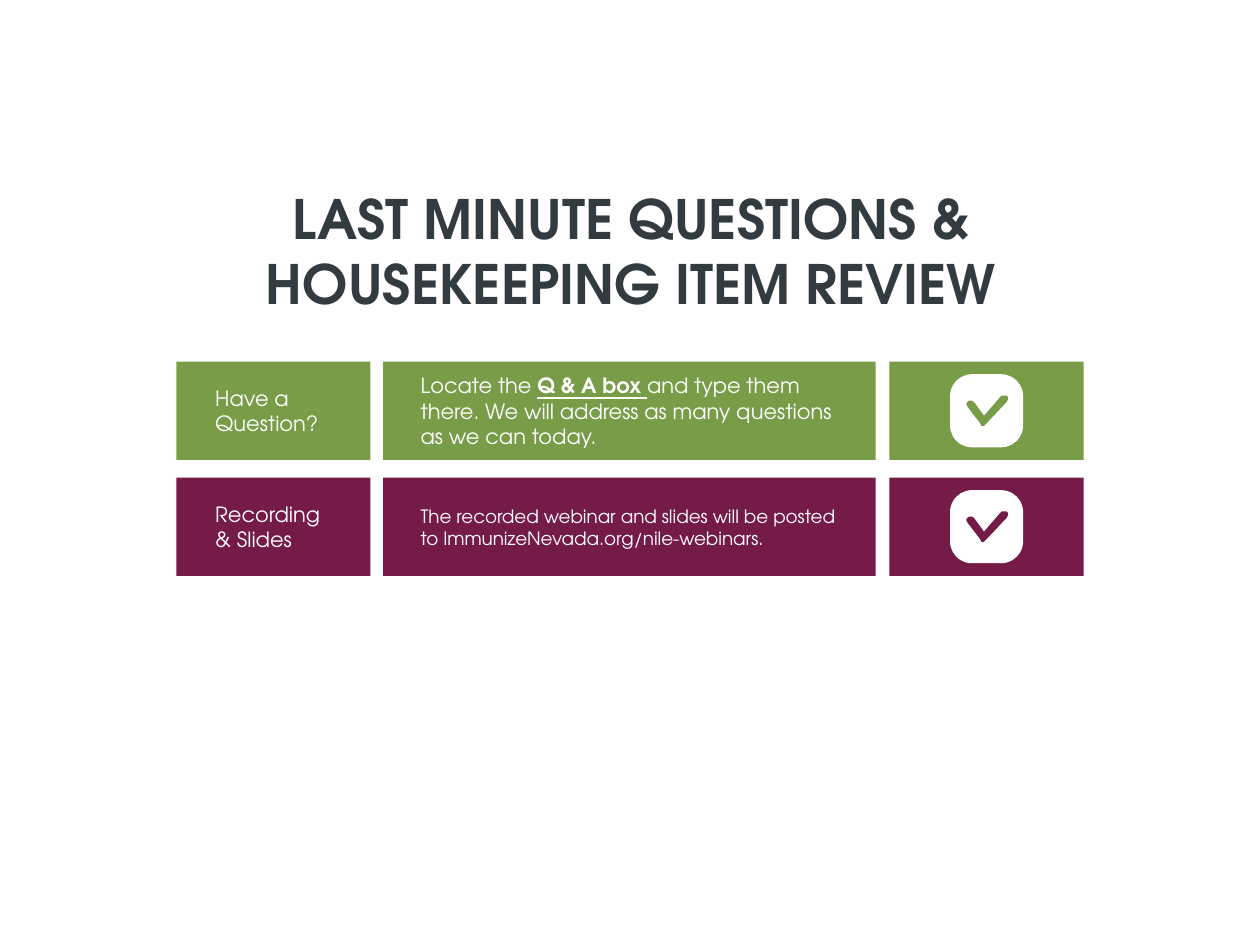
from dataclasses import dataclass

from pptx import Presentation
from pptx.dml.color import RGBColor
from pptx.enum.shapes import MSO_SHAPE as Shape
from pptx.enum.text import MSO_ANCHOR as Anchor, PP_ALIGN as Align
from pptx.shapes.base import BaseShape
from pptx.shapes.shapetree import GroupShapes, SlideShapes
from pptx.util import Inches, Pt

FONT = "TeX Gyre Adventor"
SLATE = RGBColor(0x32, 0x3C, 0x40)
GREEN = RGBColor(0x78, 0x9C, 0x48)
PLUM = RGBColor(0x74, 0x1B, 0x47)
WHITE = RGBColor(0xFF, 0xFF, 0xFF)

FIRST_ROW_TOP = 2.87
ROW_PITCH = 0.92
PANEL_HEIGHT = 0.78
PANEL_COLUMNS = ((1.4, 1.54), (3.04, 3.91), (7.06, 1.54))
BADGE_SIZE = 0.58
CHECK_OUTLINE = (
    (30, 0), (28.5, 0.2), (27, 1), (14, 15.7), (5.5, 5.3), (4.5, 4.3),
    (3, 4), (1.5, 4.5), (0.4, 5.7), (0, 7), (0.7, 9), (11, 22.5),
    (12, 23.5), (13.2, 24), (14.5, 23.7), (16, 22.5), (32, 4.6),
    (33, 3), (32.7, 1.2), (31.5, 0.2),
)


@dataclass(frozen=True)
class TextPart:
    text: str
    emphasized: bool = False


@dataclass(frozen=True)
class TextStyle:
    size: float
    color: RGBColor = WHITE
    bold: bool = False
    alignment: Align = Align.LEFT


@dataclass(frozen=True)
class ReviewItem:
    label: str
    details: tuple[TextPart, ...]
    detail_size: float
    color: RGBColor


ITEMS = (
    ReviewItem(
        "Have a Question?",
        (
            TextPart("Locate the "),
            TextPart("Q & A box ", emphasized=True),
            TextPart("and type them there. We will address as many questions as we can today."),
        ),
        12,
        GREEN,
    ),
    ReviewItem(
        "Recording & Slides",
        (TextPart("The recorded webinar and slides will be posted to ImmunizeNevada.org/nile-webinars."),),
        10.5,
        PLUM,
    ),
)


def paint(shape: BaseShape, color: RGBColor) -> None:
    shape.shadow.inherit = False
    shape.fill.solid()
    shape.fill.fore_color.rgb = color
    shape.line.fill.background()


def add_text(
    shapes: SlideShapes | GroupShapes,
    box: tuple[float, float, float, float],
    parts: tuple[TextPart, ...],
    style: TextStyle,
) -> None:
    text_frame = shapes.add_textbox(*map(Inches, box)).text_frame
    text_frame.word_wrap = True
    text_frame.vertical_anchor = Anchor.MIDDLE
    text_frame.margin_left = text_frame.margin_right = Inches(0.1)
    text_frame.margin_top = text_frame.margin_bottom = Inches(0.1)
    paragraph = text_frame.paragraphs[0]
    paragraph.alignment = style.alignment
    for part in parts:
        run = paragraph.add_run()
        run.text = part.text
        run.font.name = FONT
        run.font.size = Pt(style.size)
        run.font.color.rgb = style.color
        run.font.bold = style.bold or part.emphasized
        run.font.underline = part.emphasized


def add_check(shapes: SlideShapes, left: float, top: float, color: RGBColor) -> None:
    start, *others = CHECK_OUTLINE
    builder = shapes.build_freeform(*start, scale=Inches(0.01))
    builder.add_line_segments(others, close=True)
    paint(builder.convert_to_shape(Inches(left), Inches(top)), color)


def add_item(shapes: SlideShapes, item: ReviewItem, top: float) -> None:
    group = shapes.add_group_shape().shapes
    for left, width in PANEL_COLUMNS:
        panel = group.add_shape(
            Shape.RECTANGLE, Inches(left), Inches(top), Inches(width), Inches(PANEL_HEIGHT)
        )
        paint(panel, item.color)
    add_text(group, (1.61, top + 0.19, 1.12, 0.4), (TextPart(item.label),), TextStyle(12))
    add_text(group, (3.24, top + 0.1, 3.52, 0.58), item.details, TextStyle(item.detail_size))
    badge = group.add_shape(
        Shape.ROUNDED_RECTANGLE, Inches(7.54), Inches(top + 0.1), Inches(BADGE_SIZE), Inches(BADGE_SIZE)
    )
    badge.adjustments[0] = 0.3
    paint(badge, WHITE)
    add_check(shapes, 7.67, top + 0.27, item.color)


def main() -> None:
    presentation = Presentation()
    presentation.slide_width = Inches(10)
    presentation.slide_height = Inches(7.5)
    slide = presentation.slides.add_slide(presentation.slide_layouts[6])
    add_text(
        slide.shapes,
        (0.78, 1.72, 8.45, 0.53),
        (TextPart("LAST MINUTE QUESTIONS & HOUSEKEEPING ITEM REVIEW"),),
        TextStyle(31, SLATE, bold=True, alignment=Align.CENTER),
    )
    for index, item in enumerate(ITEMS):
        add_item(slide.shapes, item, FIRST_ROW_TOP + index * ROW_PITCH)
    presentation.save("out.pptx")


if __name__ == "__main__":
    main()
